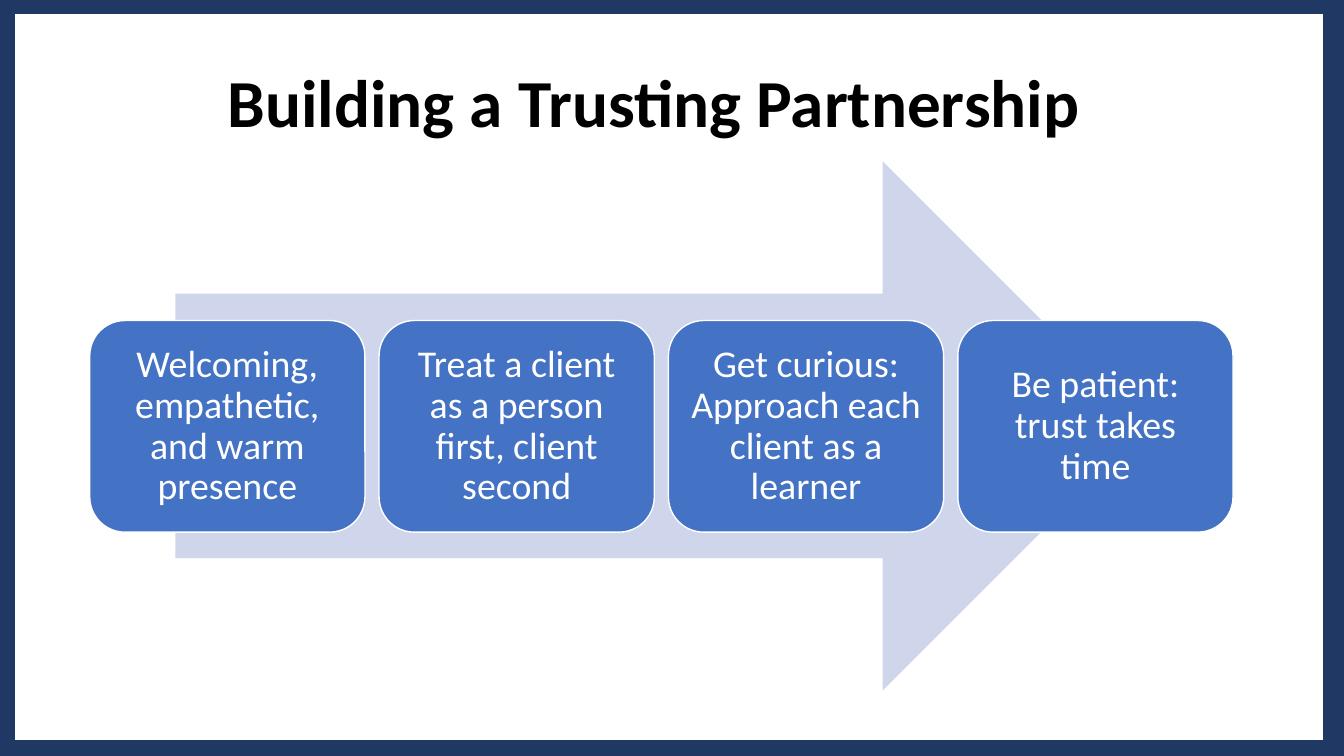
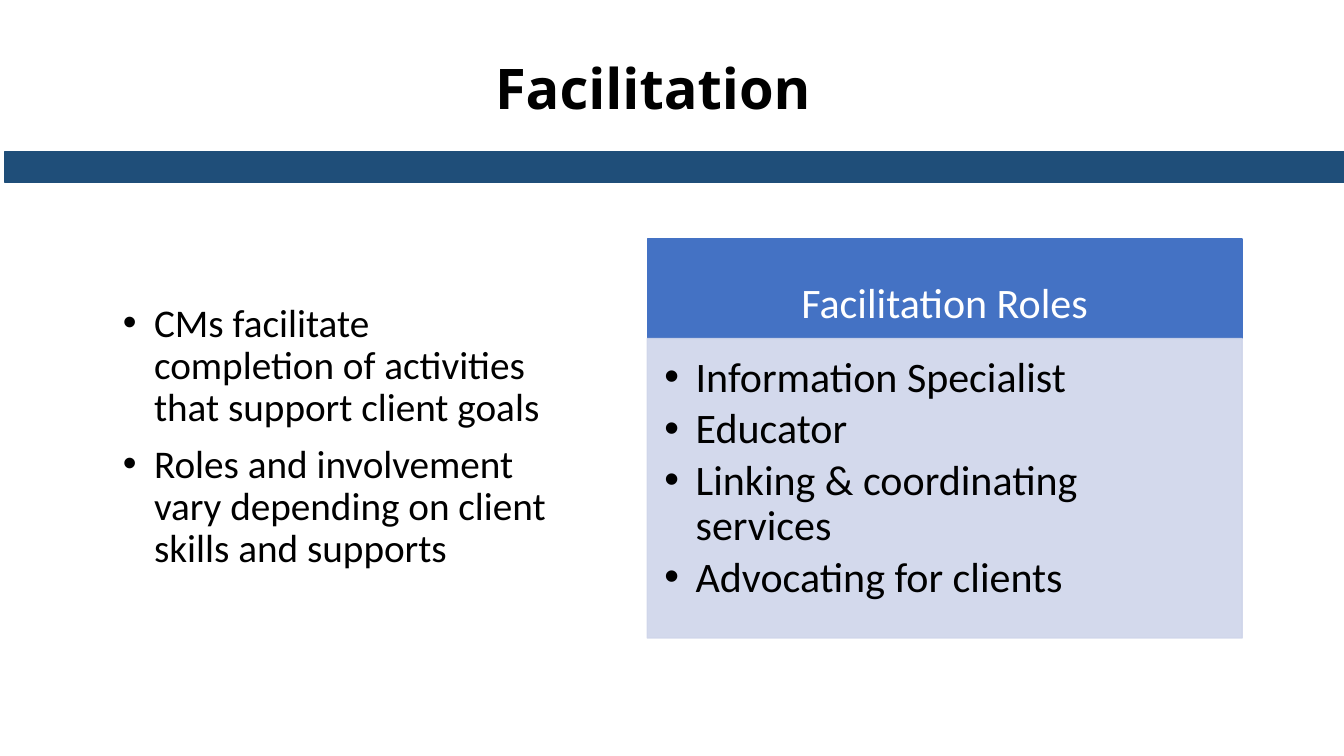
import pptx
import pptx.util
import pptx.dml.color
import pptx.enum.shapes
import pptx.enum.text
import pptx.oxml.ns
import lxml.etree

Inches = pptx.util.Inches
Pt = pptx.util.Pt
RGBColor = pptx.dml.color.RGBColor
SHAPE = pptx.enum.shapes.MSO_SHAPE
ANCHOR = pptx.enum.text.MSO_ANCHOR
ALIGN = pptx.enum.text.PP_ALIGN
qn = pptx.oxml.ns.qn

BLACK = RGBColor(0, 0, 0)
WHITE = RGBColor(255, 255, 255)
NAVY = RGBColor(0x20, 0x38, 0x64)
TEAL = RGBColor(0x1F, 0x4E, 0x79)
BLUE = RGBColor(0x44, 0x72, 0xC4)
PALE = RGBColor(0xCF, 0xD5, 0xEA)
FONT = "Calibri"

STEPS = [
    "Welcoming, empathetic, and warm presence",
    "Treat a client as a person first, client second",
    "Get curious: Approach each client as a learner",
    "Be patient: trust takes time",
]
POINTS = [
    "CMs facilitate completion of activities that support client goals",
    "Roles and involvement vary depending on client skills and supports",
]
ROLES = [
    "Information Specialist",
    "Educator",
    "Linking & coordinating services",
    "Advocating for clients",
]


def style(para, size, color, font=FONT, bold=False):
    para.font.name = font
    para.font.size = Pt(size)
    para.font.bold = bold
    para.font.color.rgb = color


def add_slide(deck, title, box, size, font=FONT):
    slide = deck.slides.add_slide(deck.slide_layouts[5])
    head = slide.shapes.title
    head.left, head.top, head.width, head.height = map(Inches, box)
    frame = head.text_frame
    frame.text = title
    frame.auto_size = pptx.enum.text.MSO_AUTO_SIZE.NONE
    frame.vertical_anchor = ANCHOR.MIDDLE
    para = frame.paragraphs[0]
    para.alignment = ALIGN.LEFT
    style(para, size, BLACK, font, True)
    return slide


def add_shape(slide, kind, box, fill=None, line=None, width=1):
    shape = slide.shapes.add_shape(kind, *map(Inches, box))
    shape.shadow.inherit = False
    if fill is None:
        shape.fill.background()
    else:
        shape.fill.solid()
        shape.fill.fore_color.rgb = fill
    if line is None:
        shape.line.fill.background()
    else:
        shape.line.color.rgb = line
        shape.line.width = Pt(width)
    return shape


def set_alpha(shape, percent):
    for color in shape.element.spPr.iter(qn("a:srgbClr")):
        alpha = lxml.etree.SubElement(color, qn("a:alpha"))
        alpha.set("val", str(percent * 1000))


def set_frame(shape, insets, anchor):
    frame = shape.text_frame
    frame.word_wrap = True
    frame.vertical_anchor = anchor
    (frame.margin_left, frame.margin_top,
     frame.margin_right, frame.margin_bottom) = map(Inches, insets)
    return frame


def add_label(shape, text, size, insets, spacing):
    frame = set_frame(shape, insets, ANCHOR.MIDDLE)
    frame.text = text
    para = frame.paragraphs[0]
    para.alignment = ALIGN.CENTER
    para.line_spacing = spacing
    style(para, size, WHITE)


def add_list(shape, items, size, insets, gap):
    frame = set_frame(shape, insets, ANCHOR.TOP)
    frame.text = "\n".join(items)
    for i, para in enumerate(frame.paragraphs):
        props = para._p.get_or_add_pPr()
        props.set("marL", str(Inches(0.31)))
        props.set("indent", str(-Inches(0.31)))
        face = lxml.etree.SubElement(props, qn("a:buFont"))
        face.set("typeface", "Arial")
        mark = lxml.etree.SubElement(props, qn("a:buChar"))
        mark.set("char", "•")
        para.alignment = ALIGN.LEFT
        para.line_spacing = 0.9
        if i:
            para.space_before = Pt(gap)
        style(para, size, BLACK)


def build_trust(deck):
    slide = add_slide(deck, "Building a Trusting Partnership",
                      (2.16, 0.54, 9.62, 0.91), 48)
    add_shape(slide, SHAPE.RECTANGLE, (0.01, 0, 13.25, 7.48),
              line=NAVY, width=20)
    add_shape(slide, SHAPE.RIGHT_ARROW, (1.74, 1.6, 9.64, 5.25), PALE)
    for i, step in enumerate(STEPS):
        card = add_shape(slide, SHAPE.ROUNDED_RECTANGLE,
                         (0.89 + i * 2.87, 3.18, 2.73, 2.1), BLUE, WHITE)
        add_label(card, step, 27, [0.11] * 4, 0.9)


def build_roles(deck):
    slide = add_slide(deck, "Facilitation", (4.81, 0.48, 3.36, 0.77),
                      40, "Open Sans")
    add_shape(slide, SHAPE.RECTANGLE, (0.05, 1.5, 13.28, 0.31), TEAL, TEAL)
    box = slide.shapes.add_textbox(*map(Inches, (1.12, 2.96, 4.42, 2.79)))
    add_list(box, POINTS, 28, (0.1, 0.05, 0.1, 0.05), 10)
    head = add_shape(slide, SHAPE.RECTANGLE, (6.42, 2.37, 5.9, 0.99),
                     BLUE, BLUE)
    add_label(head, "Facilitation Roles", 30, (0.23, 0.13, 0.23, 0.13), 1.5)
    body = add_shape(slide, SHAPE.RECTANGLE, (6.42, 3.36, 5.9, 2.97),
                     PALE, PALE)
    set_alpha(body, 90)
    add_list(body, ROLES, 30, (0.17, 0.17, 0.23, 0.26), 4.5)


def main():
    deck = pptx.Presentation()
    deck.slide_width = Inches(13.33)
    deck.slide_height = Inches(7.5)
    build_trust(deck)
    build_roles(deck)
    deck.save("out.pptx")


if __name__ == "__main__":
    main()
